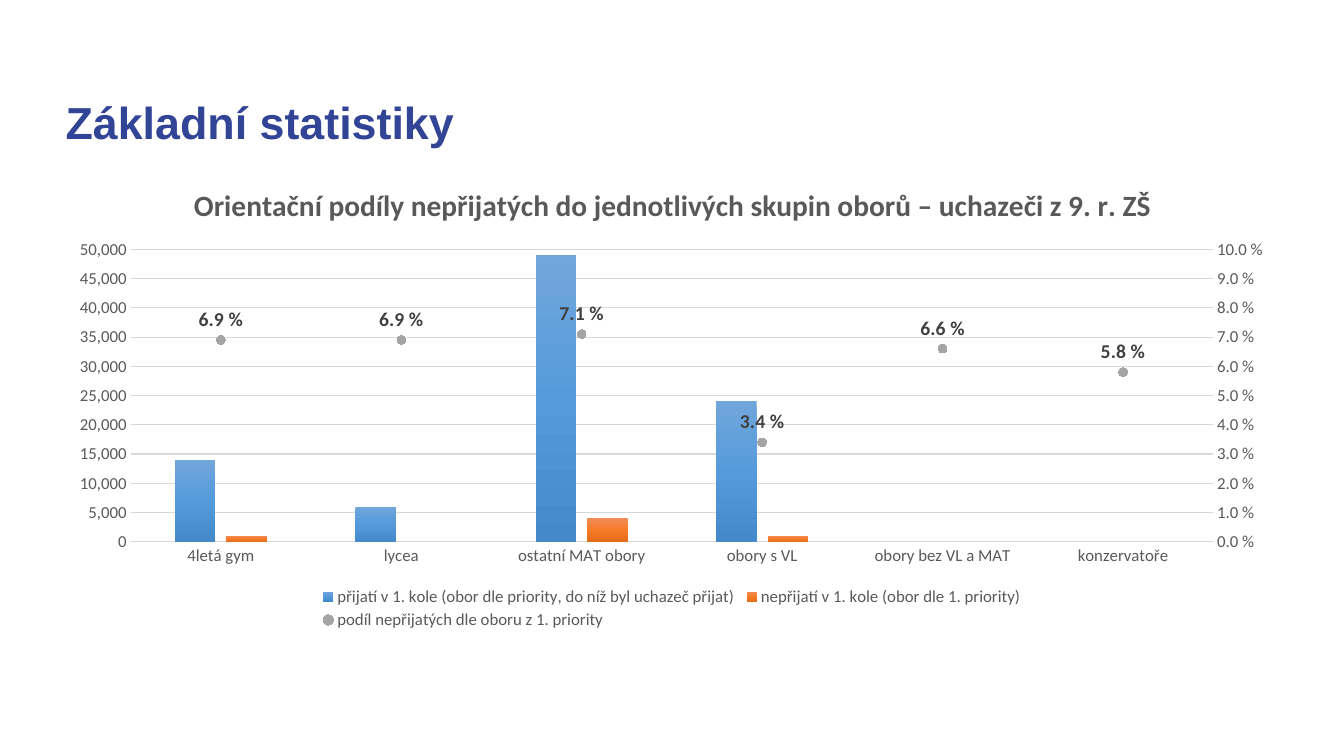
from copy import deepcopy
from dataclasses import dataclass

from pptx import Presentation
from pptx.chart.axis import ValueAxis
from pptx.chart.data import CategoryChartData
from pptx.dml.color import RGBColor
from pptx.enum.chart import (XL_CHART_TYPE, XL_LABEL_POSITION,
                             XL_LEGEND_POSITION, XL_MARKER_STYLE, XL_TICK_MARK)
from pptx.enum.text import MSO_ANCHOR, PP_ALIGN
from pptx.oxml import parse_xml
from pptx.oxml.ns import nsdecls, qn
from pptx.util import Inches, Pt


@dataclass(frozen=True)
class Theme:
    heading_font: str = "Arial"
    chart_font: str = "Calibri"
    heading: str = "324496"
    text: str = "595959"
    label: str = "404040"
    grid: str = "D9D9D9"
    marker: str = "A5A5A5"
    accepted: tuple = ("71A6DB", "559BDB", "448ACA")
    rejected: tuple = ("F18C57", "F67B28", "E56C19")
    heading_size: int = 32
    chart_title_size: int = 21
    label_size: int = 14
    axis_size: int = 12


PERCENT = r"0.0\ %"
GROUPS = ["4letá gym", "lycea", "ostatní MAT obory", "obory s VL",
          "obory bez VL a MAT", "konzervatoře"]
ACCEPTED = [14000, 6000, 49000, 24000, 0, 0]
REJECTED = [1000, 0, 4000, 1000, 0, 0]
SHARES = [0.069, 0.069, 0.071, 0.034, 0.066, 0.058]


def format_font(font, *, name, size, color, bold=False):
    font.name, font.size, font.bold = name, Pt(size), bold
    font.color.rgb = RGBColor.from_string(color)


def write(frame, text, *, line_spacing=None, space_after=None, align=None, **style):
    para = frame.paragraphs[0]
    para.line_spacing, para.alignment = line_spacing, align
    if space_after is not None:
        para.space_after = Pt(space_after)
    span = para.add_run()
    span.text = text
    format_font(span.font, **style)


def set_layout(parent, index, *, target="", **fractions):
    """Place a chart part by fractions of the chart area."""
    for old in parent.findall(qn("c:layout")):
        parent.remove(old)
    modes = "".join(f'<c:{key}Mode val="edge"/>' for key in "xy")
    sizes = "".join(f'<c:{key} val="{value}"/>' for key, value in fractions.items())
    parent.insert(index, parse_xml(
        f'<c:layout {nsdecls("c")}><c:manualLayout>{target}{modes}{sizes}'
        '</c:manualLayout></c:layout>'))


def move_to_right_axis(plot_area, series):
    """Turn a column series into a line on a second axis and return that axis."""
    line_plot = parse_xml(
        f'<c:lineChart {nsdecls("c")}><c:grouping val="standard"/>'
        '<c:varyColors val="0"/><c:marker val="1"/>'
        '<c:axId val="3001"/><c:axId val="3002"/></c:lineChart>')
    for flag in series.findall(qn("c:invertIfNegative")):
        series.remove(flag)
    line_plot.insert(2, series)
    plot_area.find(qn("c:barChart")).addnext(line_plot)

    def axis(tag, own, other, deleted, side, crosses):
        return parse_xml(
            f'<c:{tag} {nsdecls("c")}><c:axId val="{own}"/>'
            '<c:scaling><c:orientation val="minMax"/></c:scaling>'
            f'<c:delete val="{deleted}"/><c:axPos val="{side}"/>'
            f'<c:tickLblPos val="nextTo"/><c:crossAx val="{other}"/>'
            f'<c:crosses val="{crosses}"/></c:{tag}>')

    right = axis("valAx", 3002, 3001, 0, "r", "max")
    left_axis = plot_area.find(qn("c:valAx"))
    left_axis.addnext(right)
    right.addnext(axis("catAx", 3001, 3002, 1, "b", "autoZero"))
    return ValueAxis(right)


class StatisticsSlide:
    def __init__(self, deck, theme):
        self.theme = theme
        self.page = deck.slides.add_slide(deck.slide_layouts[5])

    def add_title(self, text, left, top, width, height):
        box = self.page.shapes.title
        box.left, box.top, box.width, box.height = map(Inches, (left, top, width, height))
        frame = box.text_frame
        frame.word_wrap, frame.vertical_anchor = True, MSO_ANCHOR.TOP
        write(frame, text, line_spacing=1.05, space_after=6, align=PP_ALIGN.LEFT,
              name=self.theme.heading_font, size=self.theme.heading_size,
              color=self.theme.heading, bold=True)

    def chart_style(self, **changes):
        return {"name": self.theme.chart_font, "size": self.theme.axis_size,
                "color": self.theme.text, **changes}

    def style_axis(self, axis, *, maximum=None, step=None, number_format=None, line=None):
        axis.major_tick_mark = axis.minor_tick_mark = XL_TICK_MARK.NONE
        format_font(axis.tick_labels.font, **self.chart_style())
        if maximum is not None:
            axis.minimum_scale, axis.maximum_scale, axis.major_unit = 0, maximum, step
            axis.tick_labels.number_format = number_format
            axis.tick_labels.number_format_is_linked = False
        if line:
            axis.format.line.color.rgb = RGBColor.from_string(line)
            axis.format.line.width = Pt(1)
        else:
            axis.format.line.fill.background()

    def style_columns(self, series, colors):
        fill = series.format.fill
        fill.gradient()
        fill.gradient_angle = 270
        stops = series._element.find(".//" + qn("a:gsLst"))
        stops.append(deepcopy(stops[0]))
        for stop, color, position in zip(fill.gradient_stops, colors, (0, 0.5, 1)):
            stop.color.rgb = RGBColor.from_string(color)
            stop.position = position

    def style_shares(self, series):
        series.smooth = False
        series.format.line.fill.background()
        marker = series.marker
        marker.style, marker.size = XL_MARKER_STYLE.CIRCLE, 6
        color = RGBColor.from_string(self.theme.marker)
        marker.format.fill.solid()
        marker.format.fill.fore_color.rgb = color
        marker.format.line.color.rgb = color
        labels = series.data_labels
        labels.show_value, labels.position = True, XL_LABEL_POSITION.ABOVE
        labels.number_format, labels.number_format_is_linked = PERCENT, False
        format_font(labels.font, **self.chart_style(
            size=self.theme.label_size, color=self.theme.label, bold=True))

    def add_chart(self, title, left, top, width, height):
        data = CategoryChartData(number_format="#,##0")
        data.categories = GROUPS
        data.add_series("přijatí v 1. kole (obor dle priority, do níž byl uchazeč přijat)", ACCEPTED)
        data.add_series("nepřijatí v 1. kole (obor dle 1. priority)", REJECTED)
        data.add_series("podíl nepřijatých dle oboru z 1. priority", SHARES, PERCENT)
        chart = self.page.shapes.add_chart(
            XL_CHART_TYPE.COLUMN_CLUSTERED,
            *map(Inches, (left, top, width, height)), data).chart
        format_font(chart.font, **self.chart_style())

        columns = chart.plots[0]
        columns.gap_width, columns.overlap, columns.vary_by_categories = 219, -27, False
        accepted, rejected, shares = columns.series
        self.style_columns(accepted, self.theme.accepted)
        self.style_columns(rejected, self.theme.rejected)
        left_axis = chart.value_axis
        plot_area = chart._chartSpace.find(".//" + qn("c:plotArea"))
        right_axis = move_to_right_axis(plot_area, shares._element)
        self.style_shares(chart.plots[1].series[0])

        self.style_axis(chart.category_axis, line=self.theme.grid)
        self.style_axis(left_axis, maximum=50000, step=5000, number_format="#,##0")
        self.style_axis(right_axis, maximum=0.1, step=0.01, number_format=PERCENT)
        grid = left_axis.major_gridlines.format.line
        grid.color.rgb, grid.width = RGBColor.from_string(self.theme.grid), Pt(0.75)

        heading = chart.chart_title
        write(heading.text_frame, title, **self.chart_style(
            size=self.theme.chart_title_size, bold=True))
        heading.include_in_layout = False
        chart.has_legend = True
        legend = chart.legend
        legend.position, legend.include_in_layout = XL_LEGEND_POSITION.BOTTOM, False
        format_font(legend.font, **self.chart_style())
        set_layout(plot_area, 0, target='<c:layoutTarget val="inner"/>',
                   x=0.061, y=0.174, w=0.878, h=0.628)
        set_layout(heading._element, 1, x=0.108, y=0.023)
        set_layout(legend._element, 1, x=0.212, y=0.891, w=0.576, h=0.108)


def main():
    deck = Presentation()
    deck.slide_width, deck.slide_height = Inches(13.33), Inches(7.5)
    slide = StatisticsSlide(deck, Theme())
    slide.add_title("Základní statistiky", 0.55, 0.86, 12.21, 6.2)
    slide.add_chart("Orientační podíly nepřijatých do jednotlivých skupin oborů – uchazeči z 9. r. ZŠ",
                    0.55, 1.67, 12.23, 4.62)
    deck.save("out.pptx")


if __name__ == "__main__":
    main()
